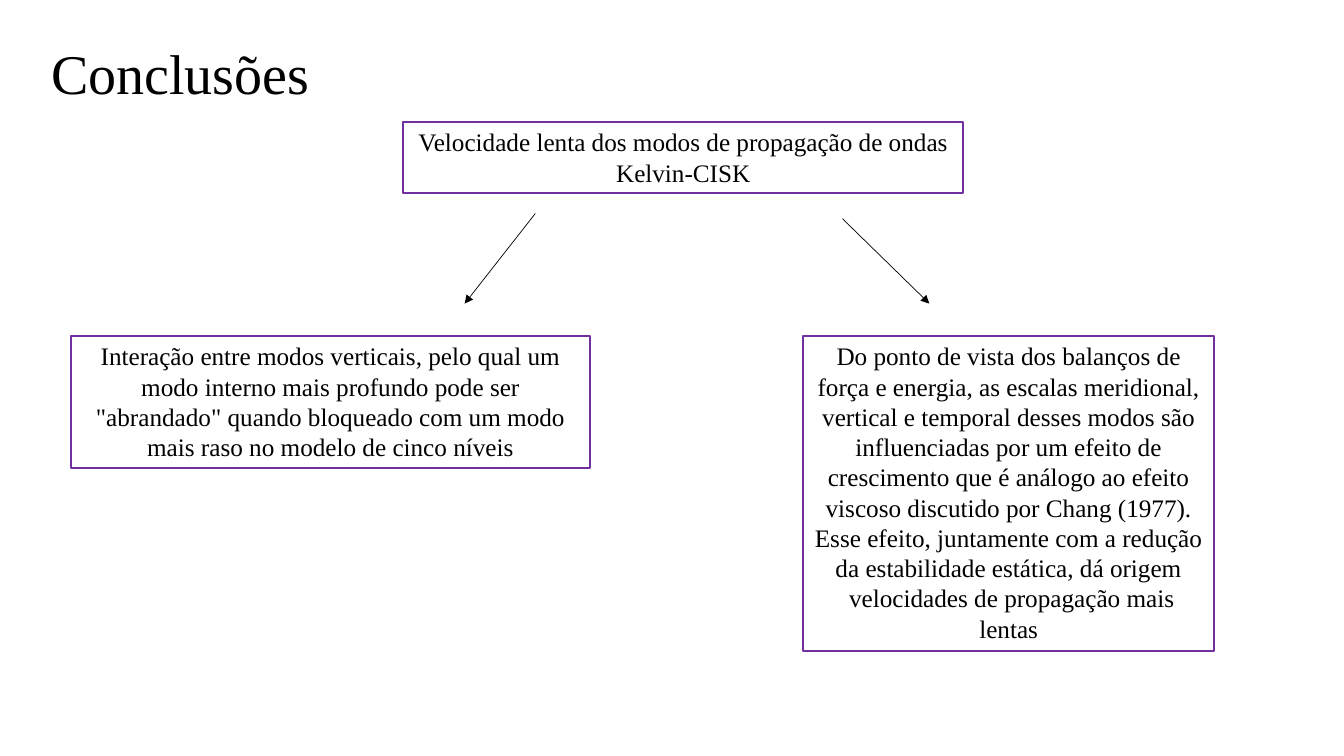
from lxml.etree import SubElement
from pptx import Presentation
from pptx.dml.color import RGBColor
from pptx.enum.shapes import MSO_CONNECTOR as Connector, MSO_SHAPE as Preset
from pptx.enum.text import MSO_ANCHOR as Anchor, MSO_AUTO_SIZE as AutoSize, PP_ALIGN as Align
from pptx.oxml.ns import qn
from pptx.util import Cm, Pt

COLOURS = {"text": "000000", "border": "7030A0", "background": "FFFFFF"}
FONT = "Times New Roman"


def colour(name):
    """Return the named colour of the palette."""
    return RGBColor.from_string(COLOURS[name])


def write_text(frame, *lines, size=18, align=Align.CENTER, anchor=Anchor.TOP,
               spacing=1.0, auto_size=AutoSize.SHAPE_TO_FIT_TEXT):
    """Fill a text frame with one formatted paragraph per line."""
    frame.word_wrap = True
    frame.auto_size = auto_size
    frame.vertical_anchor = anchor
    for index, line in enumerate(lines):
        paragraph = frame.add_paragraph() if index else frame.paragraphs[0]
        paragraph.alignment = align
        paragraph.line_spacing = spacing
        run = paragraph.add_run()
        run.text = line
        run.font.name = FONT
        run.font.size = Pt(size)
        run.font.color.rgb = colour("text")


class SlideBuilder:
    """Hold the current slide and its style, and add elements to it."""

    def __init__(self, presentation):
        """Add a title-only slide with a plain background."""
        self.slide = presentation.slides.add_slide(presentation.slide_layouts[5])
        self.border_width = Pt(1.5)
        self.arrow_width = Pt(0.5)
        fill = self.slide.background.fill
        fill.solid()
        fill.fore_color.rgb = colour("background")

    def title(self, text, left, top, width, height):
        """Place and format the title placeholder."""
        shape = self.slide.shapes.title
        shape.left, shape.top, shape.width, shape.height = map(Cm, (left, top, width, height))
        write_text(shape.text_frame, text, size=40, align=Align.LEFT,
                   anchor=Anchor.MIDDLE, spacing=0.9, auto_size=AutoSize.NONE)

    def box(self, left, top, width, height, *lines):
        """Add an outlined box of centred text."""
        shape = self.slide.shapes.add_shape(
            Preset.RECTANGLE, *map(Cm, (left, top, width, height)))
        shape.shadow.inherit = False
        shape.fill.background()
        shape.line.color.rgb = colour("border")
        shape.line.width = self.border_width
        write_text(shape.text_frame, *lines)

    def arrow(self, start_x, start_y, end_x, end_y):
        """Add a thin straight arrow."""
        connector = self.slide.shapes.add_connector(
            Connector.STRAIGHT, *map(Cm, (start_x, start_y, end_x, end_y)))
        connector.line.color.rgb = colour("text")
        connector.line.width = self.arrow_width
        SubElement(connector.line._get_or_add_ln(), qn("a:tailEnd"), type="triangle")
        SubElement(connector._element.spPr, qn("a:effectLst"))


def main():
    """Build the conclusions slide and save it."""
    presentation = Presentation()
    presentation.slide_width, presentation.slide_height = Cm(33.87), Cm(19.05)
    builder = SlideBuilder(presentation)
    causes_top, arrows_bottom = 8.46, 7.65

    builder.title("Conclusões", 1.04, 0.76, 32.36, 2.31)
    builder.box(
        20.24, causes_top, 10.36, 7.95,
        "Do ponto de vista dos balanços de força e energia, as escalas meridional, "
        "vertical e temporal desses modos são influenciadas por um efeito de "
        "crescimento que é análogo ao efeito viscoso discutido por Chang (1977). "
        "Esse efeito, juntamente com a redução da estabilidade estática, dá origem",
        " velocidades de propagação mais lentas")
    builder.box(
        10.16, 3.07, 14.12, 1.8,
        "Velocidade lenta dos modos de propagação de ondas Kelvin-CISK")
    builder.box(
        1.8, causes_top, 13.06, 3.33,
        "Interação entre modos verticais, pelo qual um modo interno mais profundo "
        'pode ser "abrandado" quando bloqueado com um modo mais raso no modelo de '
        "cinco níveis")
    builder.arrow(13.49, 5.38, 11.71, arrows_bottom)
    builder.arrow(21.23, 5.51, 23.42, arrows_bottom)
    presentation.save("out.pptx")


if __name__ == "__main__":
    main()
